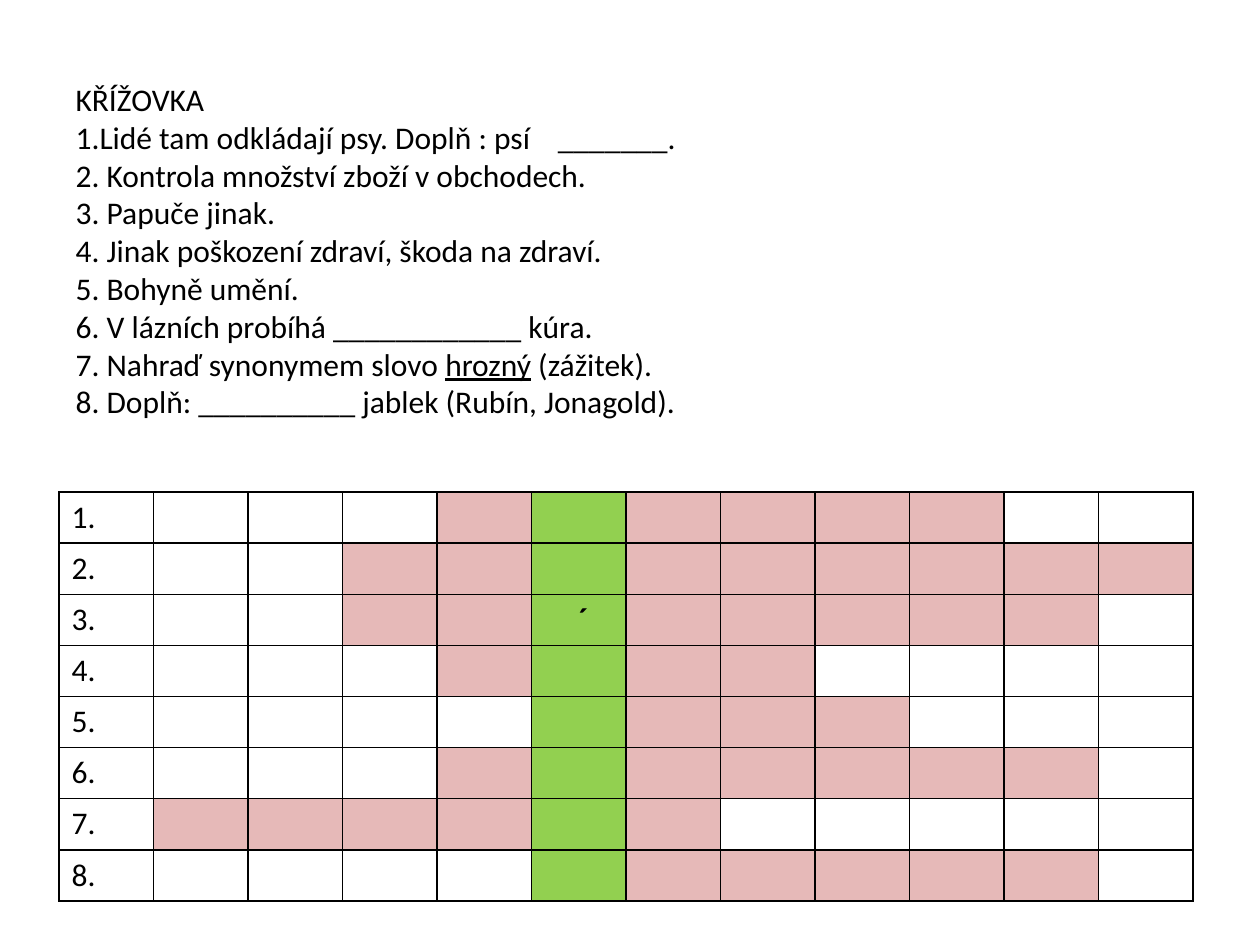
from dataclasses import dataclass

from lxml import etree
from pptx import Presentation
from pptx.dml.color import RGBColor
from pptx.enum.text import MSO_ANCHOR, MSO_AUTO_SIZE, PP_ALIGN
from pptx.oxml.ns import qn
from pptx.util import Cm, Pt

LEFT = PP_ALIGN.LEFT
MIDDLE = MSO_ANCHOR.MIDDLE
NO_AUTOFIT = MSO_AUTO_SIZE.NONE
TITLE_ONLY_LAYOUT = 5

BLACK, WHITE, PINK, GREEN = "000000", "FFFFFF", "E6B9B8", "92D050"
COLUMN_COUNT = 12
SOLUTION_COLUMN = 5
ACCENT_ROW = 2


@dataclass
class Answer:
    """Columns of the first and last letter of one crossword answer."""
    first: int
    last: int

    def color_at(self, column: int) -> str:
        if column == SOLUTION_COLUMN:
            return GREEN
        return PINK if self.first <= column <= self.last else WHITE


ANSWERS = [
    Answer(4, 9), Answer(3, 11), Answer(3, 10), Answer(4, 7),
    Answer(5, 8), Answer(4, 10), Answer(1, 6), Answer(5, 10),
]

# Each line is a list of runs; a run is its text and whether it is underlined
CLUE_LINES = [
    [("KŘÍŽOVKA", False)],
    [("1.Lidé tam odkládají psy. Doplň : psí\t_______.", False)],
    [("2. Kontrola množství zboží v obchodech.", False)],
    [("3. Papuče jinak.", False)],
    [("4. Jinak poškození zdraví, škoda na zdraví.", False)],
    [("5. Bohyně umění.", False)],
    [("6. V lázních probíhá ____________ kúra.", False)],
    [("7. Nahraď synonymem slovo ", False), ("hrozný", True), (" (zážitek).", False)],
    [("8. Doplň: __________ jablek (Rubín, Jonagold).", False)],
]


def color(value: str) -> RGBColor:
    return RGBColor.from_string(value)


def add_run(paragraph, text: str, underline: bool = False, bold: bool = False) -> None:
    run = paragraph.add_run()
    run.text = text
    run.font.name = "Calibri"
    run.font.size = Pt(18)
    run.font.color.rgb = color(BLACK)
    run.font.bold = bold
    run.font.underline = underline


def add_tab_stop(paragraph, position: int) -> None:
    properties = paragraph._p.get_or_add_pPr()
    stops = etree.SubElement(properties, qn("a:tabLst"))
    etree.SubElement(stops, qn("a:tab"), pos=str(int(position)), algn="l")


def add_borders(cell) -> None:
    properties = cell._tc.get_or_add_tcPr()
    for index, side in enumerate(("a:lnL", "a:lnR", "a:lnT", "a:lnB")):
        line = etree.Element(qn(side), w=str(int(Pt(1))))
        fill = etree.SubElement(line, qn("a:solidFill"))
        etree.SubElement(fill, qn("a:srgbClr"), val=BLACK)
        properties.insert(index, line)


def fill_clues(title) -> None:
    title.left, title.top, title.width, title.height = Cm(1.27), Cm(0.76), Cm(22.86), Cm(8.56)
    frame = title.text_frame
    frame.word_wrap = True
    frame.auto_size = NO_AUTOFIT
    frame.vertical_anchor = MIDDLE
    paragraph = frame.paragraphs[0]
    add_tab_stop(paragraph, Cm(9.72))
    paragraph.alignment = LEFT
    for index, line in enumerate(CLUE_LINES):
        if index:
            paragraph.add_line_break()
        for text, underline in line:
            add_run(paragraph, text, underline=underline)
    # The line breaks take the size of the text
    paragraph.font.size = Pt(18)
    for line_break in paragraph._p.findall(qn("a:br")):
        etree.SubElement(line_break, qn("a:rPr"), sz="1800")


def add_crossword(slide) -> None:
    width, height = Cm(22.86), Cm(8.24)
    frame = slide.shapes.add_table(len(ANSWERS), COLUMN_COUNT, Cm(1.19), Cm(9.92), width, height)
    table = frame.table
    table.first_row = False
    table.horz_banding = False
    for row, answer in enumerate(ANSWERS):
        for column in range(COLUMN_COUNT):
            cell = table.cell(row, column)
            cell.fill.solid()
            cell.fill.fore_color.rgb = color(answer.color_at(column))
            add_borders(cell)
        add_run(table.cell(row, 0).text_frame.paragraphs[0], f"{row + 1}.")

    # Accent mark above the solution letter
    accent_cell = table.cell(ACCENT_ROW, SOLUTION_COLUMN)
    accent_cell.margin_left = Cm(0.95)
    add_run(accent_cell.text_frame.paragraphs[0], "´", bold=True)


def main() -> None:
    presentation = Presentation()
    presentation.slide_width, presentation.slide_height = Cm(25.4), Cm(19.05)
    slide = presentation.slides.add_slide(presentation.slide_layouts[TITLE_ONLY_LAYOUT])
    fill_clues(slide.shapes.title)
    add_crossword(slide)
    presentation.save("out.pptx")


if __name__ == "__main__":
    main()
